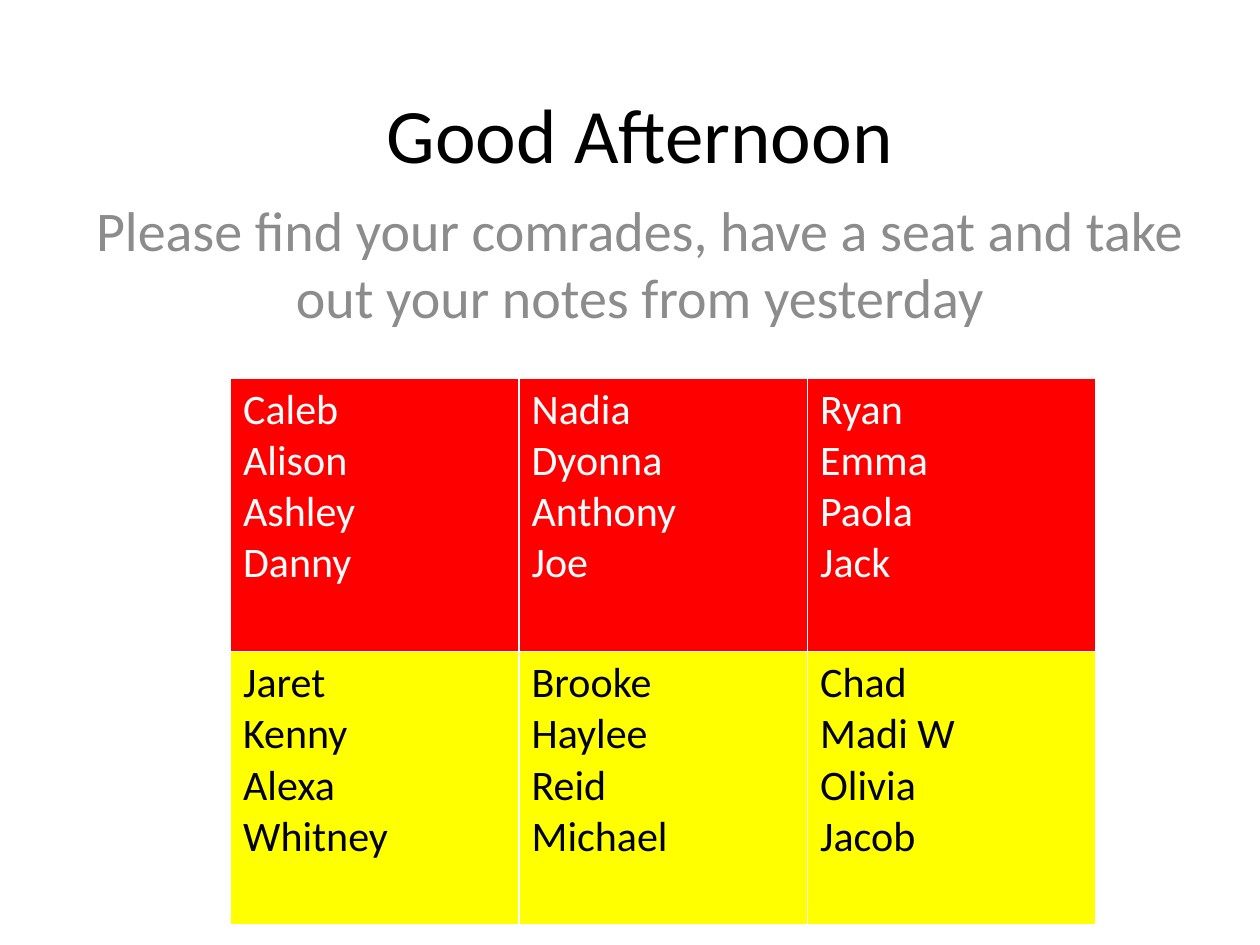
from lxml import etree
from pptx import Presentation
from pptx import util as u
from pptx.dml.color import RGBColor
from pptx.enum import text
from pptx.oxml import ns

WIDTH, HEIGHT = u.Inches(10), u.Inches(7.5)
FONT = "Calibri"
WHITE, BLACK, GREY, RED, YELLOW = "FFFFFF", "000000", "8C8C8C", "FF0000", "FFFF00"

# Each row: fill, text colour, one group of names per column
ROWS = [
    (RED, WHITE, ["Caleb\nAlison\nAshley\nDanny",
                  "Nadia\nDyonna\nAnthony\nJoe",
                  "Ryan\nEmma\nPaola\nJack"]),
    (YELLOW, BLACK, ["Jaret\nKenny\nAlexa\nWhitney",
                     "Brooke\nHaylee\nReid\nMichael",
                     "Chad\nMadi W\nOlivia\nJacob"]),
]


def rgb(value):
    return RGBColor.from_string(value)


def style(frame, size, color, align=text.PP_ALIGN.LEFT):
    for para in frame.paragraphs:
        para.alignment = align
        for span in para.runs:
            span.font.name = FONT
            span.font.size = u.Pt(size)
            span.font.color.rgb = rgb(color)


def add_heading(page, words, left, top, width, height, size, color, anchor):
    box = page.shapes.add_textbox(u.Inches(left), u.Inches(top),
                                  u.Inches(width), u.Inches(height))
    frame = box.text_frame
    frame.word_wrap = True
    frame.vertical_anchor = anchor
    frame.text = words
    style(frame, size, color, text.PP_ALIGN.CENTER)
    return frame


def add_borders(cell, color, points):
    """Draw all four cell edges; they must precede the fill in tcPr."""
    properties = cell._tc.get_or_add_tcPr()
    for index, edge in enumerate(("lnL", "lnR", "lnT", "lnB")):
        line = etree.Element(ns.qn("a:" + edge), w=str(u.Pt(points)))
        fill = etree.SubElement(line, ns.qn("a:solidFill"))
        etree.SubElement(fill, ns.qn("a:srgbClr"), val=color)
        properties.insert(index, line)


def add_groups(page, left, top, column_width, row_height):
    columns = len(ROWS[0][2])
    table = page.shapes.add_table(
        len(ROWS), columns, u.Inches(left), u.Inches(top),
        u.Inches(column_width * columns), u.Inches(row_height * len(ROWS))).table
    for row, (fill, color, groups) in enumerate(ROWS):
        table.rows[row].height = u.Inches(row_height)
        for column, names in enumerate(groups):
            cell = table.cell(row, column)
            cell.text_frame.text = names
            style(cell.text_frame, 24, color)
            cell.fill.solid()
            cell.fill.fore_color.rgb = rgb(fill)
            add_borders(cell, WHITE, 1)


def main():
    deck = Presentation()
    deck.slide_width, deck.slide_height = WIDTH, HEIGHT
    page = deck.slides.add_slide(deck.slide_layouts[6])
    add_heading(page, "Good Afternoon", 0.83, 0.25, 8.5, 1.61,
                44, BLACK, text.MSO_ANCHOR.MIDDLE)
    request = add_heading(
        page, "Please find your comrades, have a seat and take out your notes from yesterday",
        0.33, 1.5, 9.5, 1.17, 32, GREY, text.MSO_ANCHOR.TOP)
    request.paragraphs[0].space_before = u.Pt(2)
    add_groups(page, 1.83, 3, 2.29, 2.17)
    deck.save("out.pptx")


if __name__ == "__main__":
    main()
